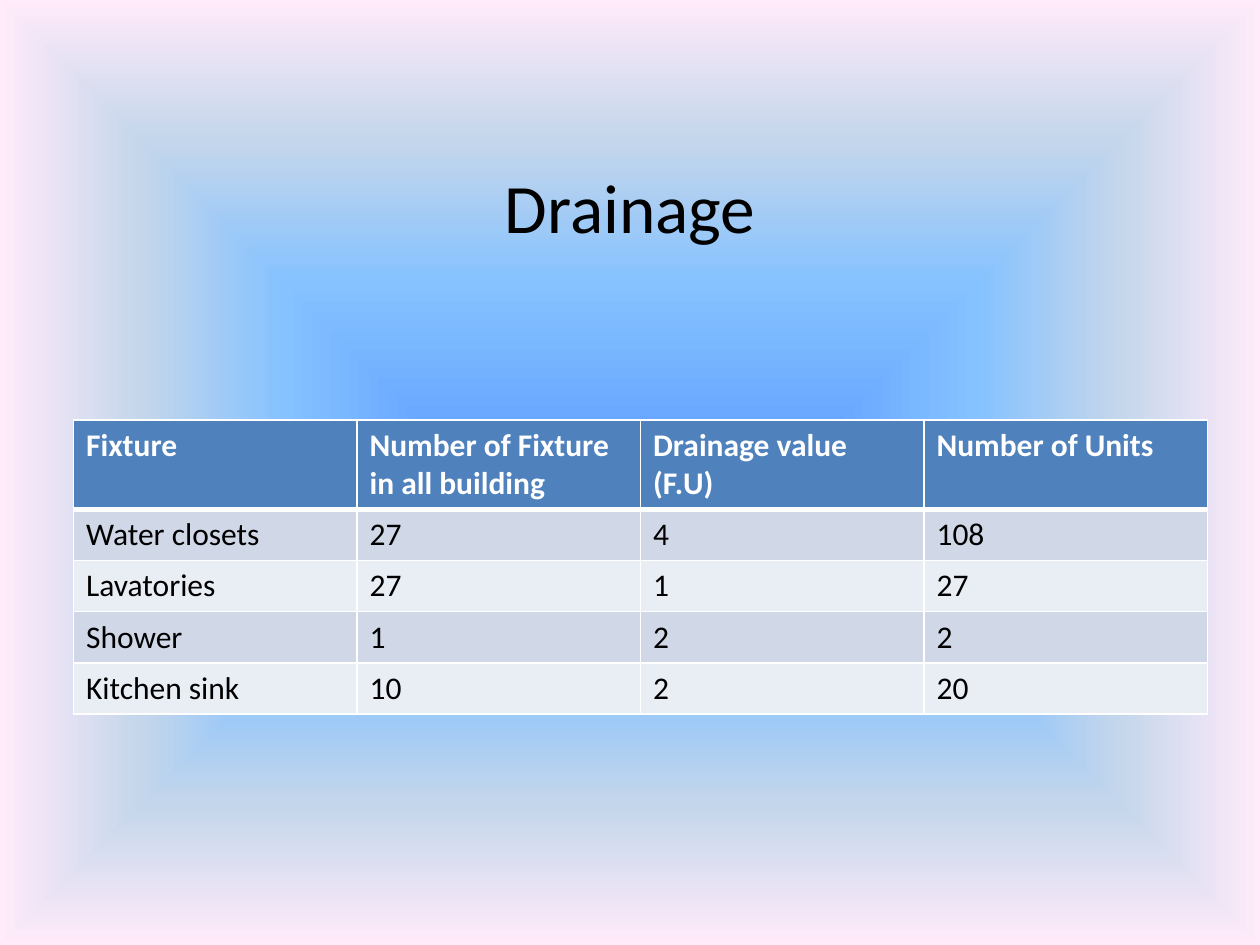
from lxml import etree
from pptx import Presentation
from pptx.dml.color import RGBColor
from pptx.enum import text
from pptx.oxml import ns
from pptx.util import Pt

BLACK = RGBColor(0x00, 0x00, 0x00)
WHITE = RGBColor(0xFF, 0xFF, 0xFF)
HEADER_BLUE = RGBColor(0x4F, 0x81, 0xBD)
BANDS = (RGBColor(0xD0, 0xD8, 0xE8), RGBColor(0xE9, 0xED, 0xF4))
GLOW = (
    (0, RGBColor(0x5E, 0x9E, 0xFF)),
    (40, RGBColor(0x85, 0xC2, 0xFF)),
    (70, RGBColor(0xC4, 0xD6, 0xEB)),
    (100, RGBColor(0xFF, 0xEB, 0xFA)),
)
FONT = "Calibri"
HEADER_HEIGHT = 51
ROW_HEIGHT = 29.2
FIXTURES = (
    ("Fixture", "Number of Fixture in all building", "Drainage value (F.U)", "Number of Units"),
    ("Water closets", "27", "4", "108"),
    ("Lavatories", "27", "1", "27"),
    ("Shower", "1", "2", "2"),
    ("Kitchen sink", "10", "2", "20"),
)


def add_node(parent, tag, **attributes):
    """Append an XML child with the given attributes and return it."""
    return etree.SubElement(parent, ns.qn(tag), attributes)


def paint_background(page):
    """Fill the page with a gradient that spreads from its centre."""
    page.background.fill.gradient()
    gradient = page.element.find(".//" + ns.qn("a:gradFill"))
    gradient.clear()
    stops = add_node(gradient, "a:gsLst")
    for percent, color in GLOW:
        stop = add_node(stops, "a:gs", pos=str(percent * 1000))
        add_node(stop, "a:srgbClr", val=str(color))
    spread = add_node(gradient, "a:path", path="shape")
    add_node(spread, "a:fillToRect", l="50000", t="50000", r="50000", b="50000")


def style_text(para, size, color, bold=False):
    """Format every run of a paragraph."""
    for span in para.runs:
        span.font.name = FONT
        span.font.size = Pt(size)
        span.font.bold = bold
        span.font.color.rgb = color


def place_title(page, left, top, width, height):
    """Place the title low in its box."""
    box = page.shapes.title
    box.left, box.top, box.width, box.height = map(Pt, (left, top, width, height))
    frame = box.text_frame
    frame.text = "Drainage"
    frame.word_wrap = True
    frame.auto_size = text.MSO_AUTO_SIZE.NONE
    frame.vertical_anchor = text.MSO_ANCHOR.TOP
    frame.margin_top = Pt(height * 0.8)
    frame.margin_bottom = 0
    para = frame.paragraphs[0]
    para.alignment = text.PP_ALIGN.CENTER
    style_text(para, 39.6, BLACK)


def draw_borders(cell, top, bottom):
    """Give a cell white borders, with set widths above and below."""
    properties = cell._tc.get_or_add_tcPr()
    sides = (("a:lnL", 1), ("a:lnR", 1), ("a:lnT", top), ("a:lnB", bottom))
    for index, (tag, width) in enumerate(sides):
        line = add_node(properties, tag, w=str(Pt(width)))
        add_node(add_node(line, "a:solidFill"), "a:srgbClr", val=str(WHITE))
        properties.insert(index, line)


def place_table(page, left, top, width):
    """Place the fixture table with a header and banded rows."""
    count, columns = len(FIXTURES), len(FIXTURES[0])
    height = HEADER_HEIGHT + ROW_HEIGHT * (count - 1)
    table = page.shapes.add_table(
        count, columns, Pt(left), Pt(top), Pt(width), Pt(height)
    ).table
    for row, values in enumerate(FIXTURES):
        header = row == 0
        table.rows[row].height = Pt(HEADER_HEIGHT if header else ROW_HEIGHT)
        for column, value in enumerate(values):
            cell = table.cell(row, column)
            cell.text = value
            cell.fill.solid()
            cell.fill.fore_color.rgb = HEADER_BLUE if header else BANDS[(row - 1) % 2]
            style_text(cell.text_frame.paragraphs[0], 18, WHITE if header else BLACK, header)
            draw_borders(cell, 3 if row == 1 else 1, 3 if header else 1)


def main():
    """Build and save the deck."""
    deck = Presentation()
    deck.slide_width, deck.slide_height = Pt(720), Pt(540)
    page = deck.slides.add_slide(deck.slide_layouts[5])
    paint_background(page)
    place_title(page, 36, 21.6, 648, 90)
    place_table(page, 42, 240, 648)
    deck.save("out.pptx")


if __name__ == "__main__":
    main()
